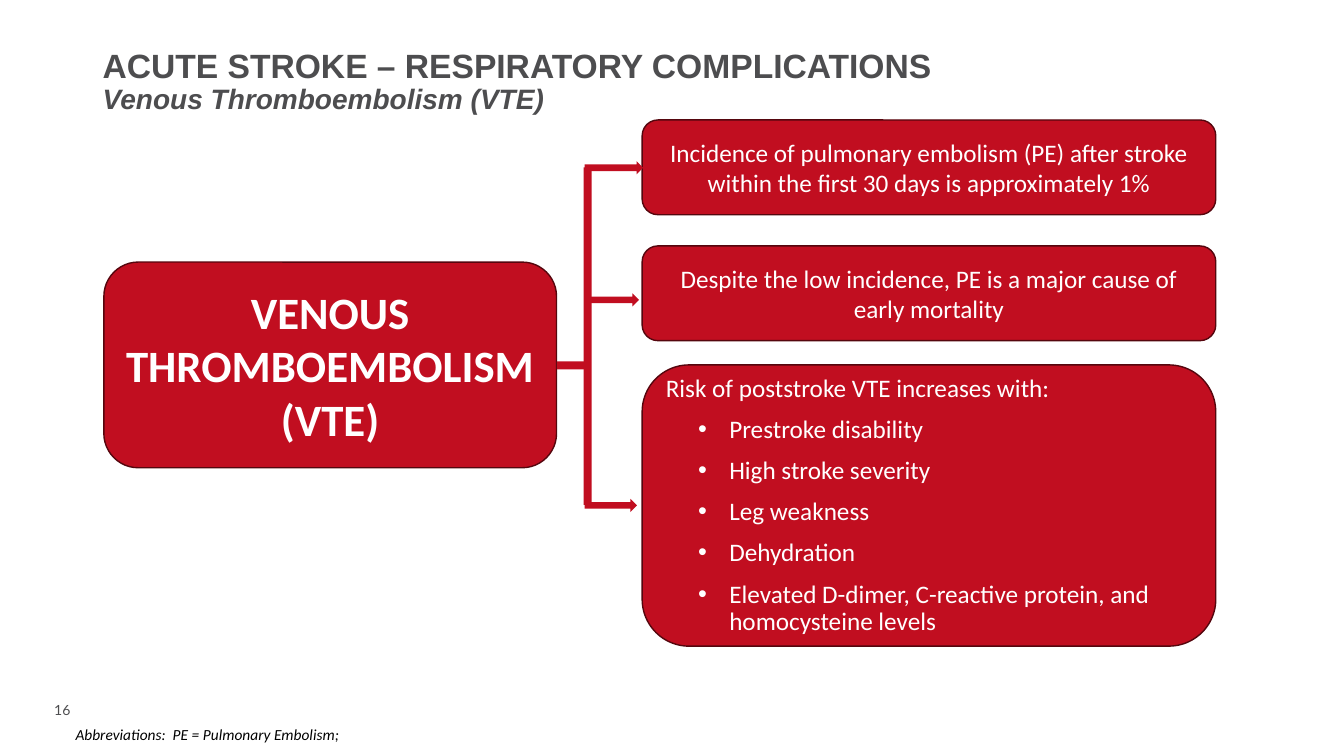
from lxml import etree
from pptx import Presentation
from pptx.dml.color import RGBColor
from pptx.enum.shapes import MSO_SHAPE
from pptx.enum.text import MSO_ANCHOR, PP_ALIGN
from pptx.oxml.ns import qn
from pptx.util import Inches, Pt

CARD = MSO_SHAPE.FLOWCHART_ALTERNATE_PROCESS
BAR = MSO_SHAPE.RECTANGLE
ARROW = MSO_SHAPE.RIGHT_ARROW
TOP, MIDDLE, BOTTOM = MSO_ANCHOR.TOP, MSO_ANCHOR.MIDDLE, MSO_ANCHOR.BOTTOM
LEFT, CENTER = PP_ALIGN.LEFT, PP_ALIGN.CENTER

COLORS = {"red": "C10E20", "edge": "55060E", "white": "FFFFFF",
          "gray": "4D4D4F", "black": "000000"}


class Page:
    """Style and current slide; places are percentages of the slide's size."""

    def __init__(self, deck):
        self.deck = deck
        self.page = deck.slides.add_slide(deck.slide_layouts[6])

    def place(self, left, top, width, height):
        across, down = self.deck.slide_width / 100, self.deck.slide_height / 100
        return (round(left * across), round(top * down),
                round(width * across), round(height * down))

    def color(self, name):
        return RGBColor.from_string(COLORS[name])

    def shape(self, kind, at, edge=None):
        shape = self.page.shapes.add_shape(kind, *self.place(*at))
        shape.shadow.inherit = False
        shape.fill.solid()
        shape.fill.fore_color.rgb = self.color("red")
        if edge:
            shape.line.color.rgb = self.color(edge)
            shape.line.width = Pt(1)
        else:
            shape.line.fill.background()
        return shape

    def card(self, at):
        frame = self.shape(CARD, at, "edge").text_frame
        frame.word_wrap = True
        frame.vertical_anchor = MIDDLE
        return frame

    def text_box(self, at, anchor=TOP, wrap=True):
        frame = self.page.shapes.add_textbox(*self.place(*at)).text_frame
        frame.word_wrap = wrap
        frame.vertical_anchor = anchor
        return frame

    def add_text(self, frame, text, size, color="white", font="Calibri", bold=False,
                 italic=False, align=LEFT, spacing=None, bullet=False):
        para = frame.paragraphs[0]
        if para.runs:
            para = frame.add_paragraph()
        if bullet:
            self.add_bullet(para)
        para.alignment = align
        if spacing:
            para.line_spacing = spacing
        span = para.add_run()
        span.text = text
        span.font.name = font
        span.font.size = Pt(size)
        span.font.bold = bold
        span.font.italic = italic
        span.font.color.rgb = self.color(color)

    def add_bullet(self, para):
        para.level = 1
        para.space_before = Pt(10)
        properties = para._p.get_or_add_pPr()
        properties.set("marL", str(Inches(0.63)))
        properties.set("indent", str(Inches(-0.31)))
        font = etree.SubElement(properties, qn("a:buFont"))
        font.set("typeface", "Arial")
        mark = etree.SubElement(properties, qn("a:buChar"))
        mark.set("char", "•")


def main():
    deck = Presentation()
    deck.slide_width, deck.slide_height = Inches(13.33), Inches(7.5)
    page = Page(deck)

    # Page number
    number = page.text_box((3.3, 92.13, 2.93, 3.6), wrap=False)
    page.add_text(number, "16", 10, "gray", "Lato")

    # Topic
    topic = page.card((7.73, 34.67, 33.68, 27.2))
    page.add_text(topic, "VENOUS THROMBOEMBOLISM (VTE)", 32, bold=True, align=CENTER)

    # Facts
    facts = [
        (15.87, "Incidence of pulmonary embolism (PE) after stroke "
                "within the first 30 days is approximately 1%"),
        (32.53, "Despite the low incidence, PE is a major cause of early mortality"),
    ]
    for top, fact in facts:
        page.add_text(page.card((47.78, top, 42.68, 12.53)), fact, 18, align=CENTER)

    # Risk factors
    risks = page.card((47.78, 48.27, 42.68, 37.2))
    page.add_text(risks, "Risk of poststroke VTE increases with:", 18, spacing=0.9)
    for risk in ("Prestroke disability", "High stroke severity", "Leg weakness",
                 "Dehydration",
                 "Elevated D-dimer, C-reactive protein, and homocysteine levels"):
        page.add_text(risks, risk, 18, spacing=0.9, bullet=True)

    # Title
    title = page.text_box((6.9, 5.73, 86.25, 10.27), BOTTOM)
    page.add_text(title, "ACUTE STROKE – RESPIRATORY COMPLICATIONS", 24, "gray",
                  "Arial", bold=True, spacing=0.9)
    page.add_text(title, "Venous Thromboembolism (VTE)", 20, "gray", "Arial",
                  bold=True, italic=True, spacing=0.9)

    # Bracket: trunk, stem and arrows to the cards
    page.shape(BAR, (43.43, 22.13, 0.6, 44.67))
    page.shape(BAR, (41.44, 47.8, 2.18, 1.07))
    for left, top, width in ((43.5, 66, 3.9), (43.5, 21.33, 4.35), (43.65, 38.8, 3.9)):
        page.shape(ARROW, (left, top, width, 1.73))

    # Abbreviations
    footer = page.text_box((4.88, 95.2, 83.48, 3.87))
    page.add_text(footer, "Abbreviations:  PE = Pulmonary Embolism;", 11, "black",
                  italic=True)

    deck.save("out.pptx")


if __name__ == "__main__":
    main()
